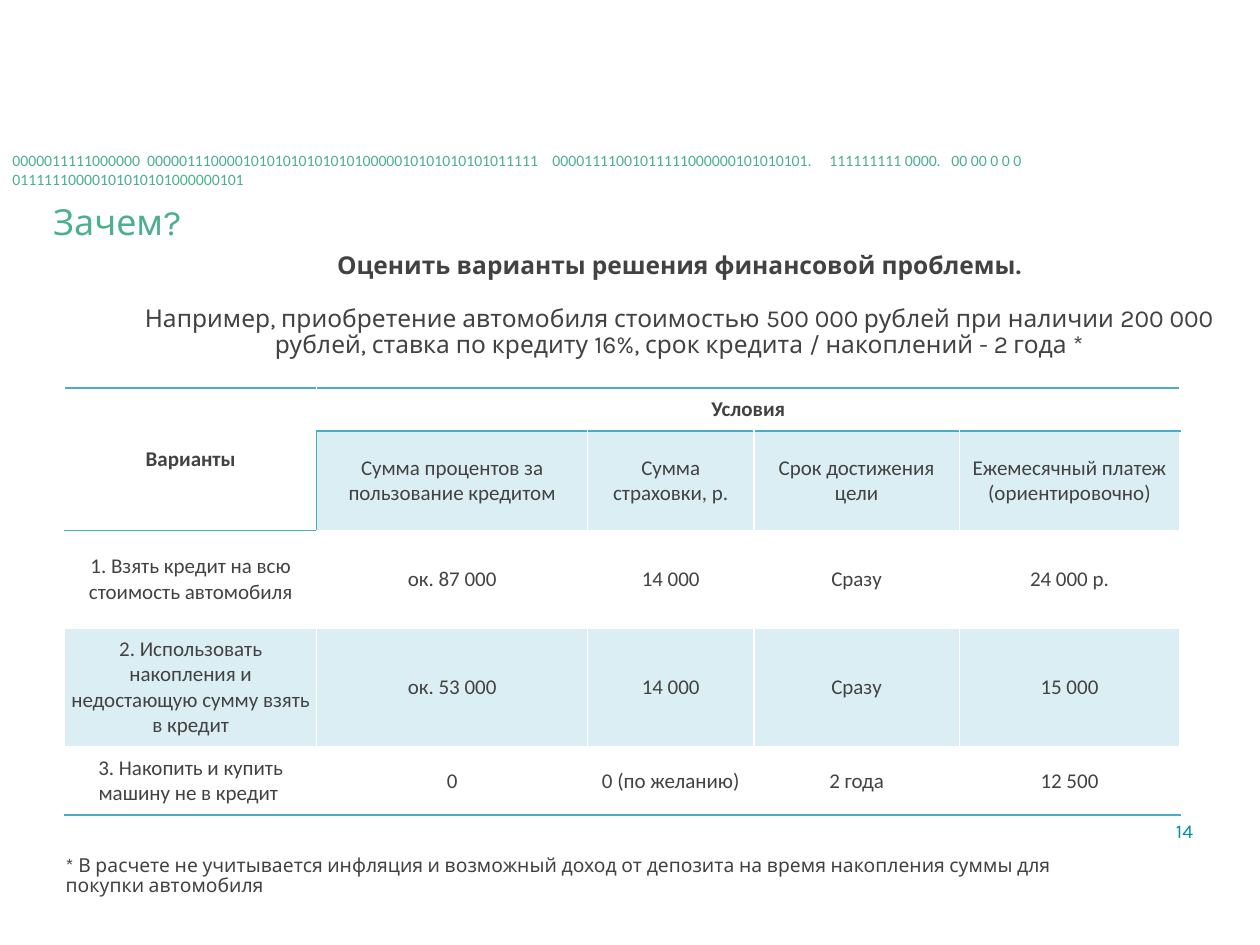
from lxml.etree import SubElement
from pptx import Presentation
from pptx.dml.color import RGBColor
from pptx.enum.text import MSO_ANCHOR, PP_ALIGN
from pptx.oxml.ns import qn
from pptx.util import Pt

GREEN = RGBColor(0x4C, 0xAF, 0x90)
TEAL = RGBColor(0x00, 0x90, 0x9B)
GRAY = RGBColor(0x42, 0x42, 0x42)
BLUE = RGBColor(0x4B, 0xAC, 0xC6)

BINARY = (
    "0000011111000000  0000011100001010101010101010000010101010101011111    "
    "00001111001011111000000101010101.     111111111 0000.   00 00 0 0 0 "
    "01111110000101010101000000101"
)
HEADLINE = "Оценить варианты решения финансовой проблемы."
EXAMPLE = (
    "Например, приобретение автомобиля стоимостью 500 000 рублей при наличии "
    "200 000 рублей, ставка по кредиту 16%, срок кредита / накоплений - 2 года *"
)
FOOTNOTE = (
    "* В расчете не учитывается инфляция и возможный доход от депозита "
    "на время накопления суммы для покупки автомобиля"
)
OPTIONS = [
    ["Варианты", "Условия", "", "", ""],
    ["", "Сумма процентов за пользование кредитом", "Сумма страховки, р.",
     "Срок достижения цели", "Ежемесячный платеж (ориентировочно)"],
    ["1. Взять кредит на всю стоимость автомобиля", "ок. 87 000", "14 000",
     "Сразу", "24 000 р."],
    ["2. Использовать накопления и недостающую сумму взять в кредит",
     "ок. 53 000", "14 000", "Сразу", "15 000"],
    ["3. Накопить и купить машину не в кредит ", "0", "0 (по желанию)",
     "2 года", "12 500"],
]
COLUMN_WIDTHS = [144, 154.8, 95, 117.4, 126]
ROW_HEIGHTS = [24.5, 57, 55.5, 68, 39]


def style_paragraph(paragraph, size, color, font="Karla", bold=False, align=PP_ALIGN.LEFT):
    """Align a paragraph and format its runs."""
    paragraph.alignment = align
    for run in paragraph.runs:
        run.font.name = font
        run.font.size = Pt(size)
        run.font.bold = bold
        run.font.color.rgb = color


def set_insets(frame, side, vertical=3.6):
    """Wrap a text frame and set its margins."""
    frame.word_wrap = True
    frame.margin_left = frame.margin_right = Pt(side)
    frame.margin_top = frame.margin_bottom = Pt(vertical)


def add_text(slide, box, lines, inset=3.6):
    """Add a wrapped text box with one paragraph per line and return its frame."""
    frame = slide.shapes.add_textbox(*map(Pt, box)).text_frame
    set_insets(frame, inset)
    frame.text = "\n".join(lines)
    return frame


def place_title(slide, box):
    """Move and format the title placeholder."""
    title = slide.shapes.title
    title.left, title.top, title.width, title.height = map(Pt, box)
    frame = title.text_frame
    set_insets(frame, 6.5)
    frame.vertical_anchor = MSO_ANCHOR.TOP
    frame.text = "Зачем?"
    style_paragraph(frame.paragraphs[0], 20.5, GREEN)


def place_binary_strip(slide, box):
    """Place the decorative strip of digits."""
    frame = add_text(slide, box, [BINARY], 7.2)
    style_paragraph(frame.paragraphs[0], 9, GREEN, "Calibri")


def place_intro(slide, box):
    """Place the headline and the worked example below it."""
    headline, example = add_text(slide, box, [HEADLINE, EXAMPLE]).paragraphs
    style_paragraph(headline, 14, GRAY, bold=True, align=PP_ALIGN.CENTER)
    style_paragraph(example, 14, GRAY, align=PP_ALIGN.CENTER)
    headline.line_spacing = example.line_spacing = 0.9
    example.space_before = Pt(15)


def place_footnote(slide, box):
    """Place the note under the table."""
    note = add_text(slide, box, [FOOTNOTE]).paragraphs[0]
    style_paragraph(note, 11, GRAY)
    note.line_spacing = 0.9


def place_page_number(slide, box):
    """Place the page number."""
    frame = add_text(slide, box, ["14"], 6.5)
    frame.vertical_anchor = MSO_ANCHOR.MIDDLE
    style_paragraph(frame.paragraphs[0], 11.1, TEAL, align=PP_ALIGN.RIGHT)


def ruled_edges(row, column):
    """Return the edges of a table cell that carry a rule, in schema order."""
    edges = {
        "L": (row, column) == (1, 1),
        "T": row == 0 or (row == 1 and column > 0) or (row == 2 and column == 0),
        "B": row in (0, 4) or (row, column) == (1, 0),
    }
    return [edge for edge, ruled in edges.items() if ruled]


def add_border(cell, edge):
    """Draw a one-point rule on an edge of a cell."""
    properties = cell._tc.get_or_add_tcPr()
    line = SubElement(properties, qn(f"a:ln{edge}"), w=str(Pt(1)))
    fill = SubElement(line, qn("a:solidFill"))
    SubElement(fill, qn("a:srgbClr"), val=str(BLUE))


def fill_cell(cell, tinted):
    """Tint a cell with translucent blue or leave it clear."""
    if not tinted:
        cell.fill.background()
        return
    cell.fill.solid()
    cell.fill.fore_color.rgb = BLUE
    color = cell._tc.tcPr.find(f".//{qn('a:solidFill')}[last()]/{qn('a:srgbClr')}")
    color = cell._tc.tcPr.find(qn("a:solidFill")).find(qn("a:srgbClr"))
    SubElement(color, qn("a:alpha"), val="20000")


def place_options(slide, left, top):
    """Place the table that compares the options."""
    table = slide.shapes.add_table(
        len(ROW_HEIGHTS), len(COLUMN_WIDTHS), Pt(left), Pt(top),
        Pt(sum(COLUMN_WIDTHS)), Pt(sum(ROW_HEIGHTS)),
    ).table
    table.first_row = table.horz_banding = False
    for column, width in zip(table.columns, COLUMN_WIDTHS):
        column.width = Pt(width)
    for row, height in zip(table.rows, ROW_HEIGHTS):
        row.height = Pt(height)
    table.cell(0, 0).merge(table.cell(1, 0))
    table.cell(0, 1).merge(table.cell(0, 4))
    for r, texts in enumerate(OPTIONS):
        for c, text in enumerate(texts):
            cell = table.cell(r, c)
            cell.margin_left = cell.margin_right = Pt(3.6)
            cell.margin_top = cell.margin_bottom = Pt(3.6)
            cell.vertical_anchor = MSO_ANCHOR.MIDDLE
            for edge in ruled_edges(r, c):
                add_border(cell, edge)
            fill_cell(cell, r == 3 or (r == 1 and c > 0))
            if text:
                cell.text_frame.text = text
                style_paragraph(cell.text_frame.paragraphs[0], 12, GRAY, "Calibri",
                                bold=r == 0, align=PP_ALIGN.CENTER)


def main():
    """Build and save the slide."""
    deck = Presentation()
    deck.slide_width, deck.slide_height = Pt(720), Pt(540)
    slide = deck.slides.add_slide(deck.slide_layouts[5])
    place_page_number(slide, (634.3, 460.8, 54, 27.4))
    place_title(slide, (23.8, 110.2, 684, 36))
    place_binary_strip(slide, (0, 82.8, 722.9, 18))
    place_footnote(slide, (34, 485.3, 609, 31))
    place_intro(slide, (62.6, 141.1, 651, 68.4))
    place_options(slide, 37, 221.8)
    deck.save("out.pptx")


if __name__ == "__main__":
    main()
